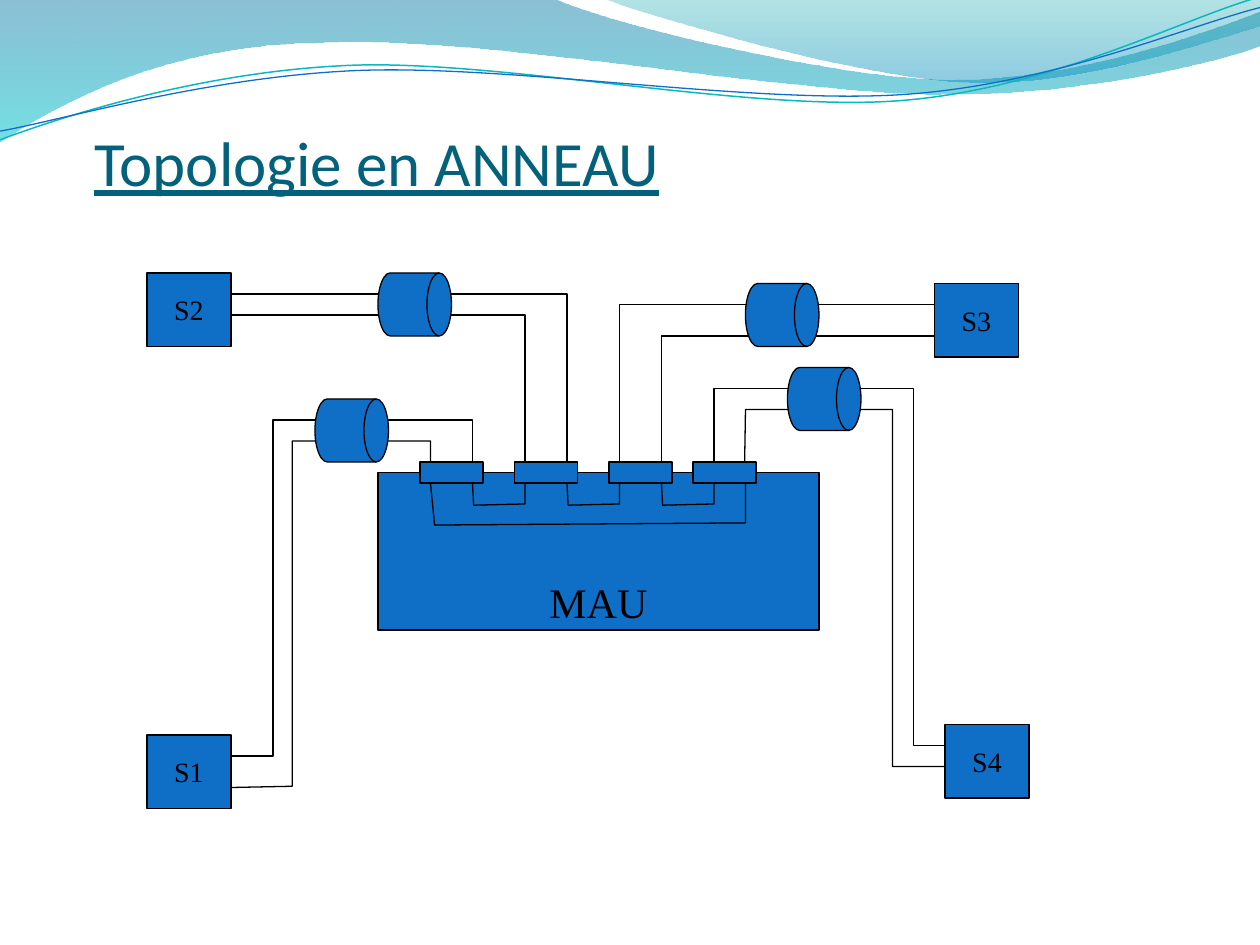
"""Build the ring topology slide: four stations wired through a MAU."""
from dataclasses import dataclass

import pptx
import pptx.dml.color
import pptx.enum.shapes
import pptx.enum.text
import pptx.oxml
import pptx.oxml.ns
import pptx.util

Pt = pptx.util.Pt
qn = pptx.oxml.ns.qn
SHAPES = pptx.enum.shapes.MSO_SHAPE
ANCHOR = pptx.enum.text.MSO_ANCHOR
ALIGN = pptx.enum.text.PP_ALIGN


@dataclass(frozen=True)
class Theme:
    blue: str = "0F6FC6"
    teal: str = "0AB8BF"
    title: str = "04617B"
    ink: str = "000000"
    heading_font: str = "Calibri"
    label_font: str = "Times New Roman"
    title_size: float = 36
    hub_size: float = 24
    station_size: float = 16
    stroke: float = 0.75
    teal_stroke: float = 0.85


THEME = Theme()
SLIDE_SIZE = (720, 540)
TITLE = ("Topologie en ANNEAU", (54, 48, 612, 66))

BANDS = [
    {"start": (0, -0.7),
     "segments": [(316.8, -0.7), (342.7, 12.2, 478.1, 45.4, 545.8, 45.4),
                  (614.2, 45.4, 689.8, 18.7, 720, 6.5), (720.7, 25.9),
                  (707.8, 31.7, 626.4, 54.7, 537.1, 54),
                  (447.8, 54, 275, 20.2, 185, 24.5),
                  (92.9, 25.2, 33.1, 59.8, -0.7, 81.4)],
     "stops": [("0074A1", 45), ("00C6CF", 55)]},
    {"start": (344.9, -0.7),
     "segments": [(366.5, 7.9, 491, 44.6, 553.7, 46.8),
                  (616.3, 49.7, 691.9, 23, 720, 15.1), (720, 0)],
     "stops": [("00A1A9", 30), ("008BBF", 45)]},
]
RIBBONS = [
    {"start": (0, 79.9),
     "segments": [(34.6, 67, 113.8, 41, 199.4, 37.4),
                  (284.4, 33.8, 427, 64.1, 513.4, 57.6),
                  (599.8, 51.1, 675.4, 10.8, 718.6, -1.4)],
     "color": THEME.teal, "width": THEME.teal_stroke},
    {"start": (0, 74.9),
     "segments": [(33.8, 69.1, 118.1, 43.9, 203.8, 40.3),
                  (290.2, 36.7, 429.8, 59.8, 516.2, 54),
                  (601.9, 48.2, 677.5, 15.1, 720, 4.3)],
     "color": THEME.blue, "width": THEME.stroke},
]

STATION_SIZE = (48, 42)
STATIONS = [("S2", (84, 156)), ("S3", (534, 162)), ("S1", (84, 420)), ("S4", (540, 414))]
HUB = ("MAU", (216, 270, 252, 90))
PORT_TOP, PORT_SIZE = 264, (36, 12)
PORT_LEFTS = [240, 294, 348, 396]
DRUM_SIZE = (42, 36)
DRUMS = [(216, 156), (426, 162), (180, 228), (450, 210)]

PORT_BOTTOM = PORT_TOP + PORT_SIZE[1]
JUMPER_STARTS, JUMPER_SPAN = [324, 270, 378], 30
RING_RETURN = [(246, PORT_BOTTOM), (248.4, 300), (426, 298.8), (426, PORT_BOTTOM)]
CABLES = [
    [(132, 168), (324, 168), (324, PORT_TOP)],
    [(300, PORT_TOP), (300, 180), (132, 180)],
    [(246, PORT_TOP), (246, 252), (167, 252), (167, 449.3), (132, 450)],
    [(270, PORT_TOP), (270, 240), (156, 240), (156, 432), (132, 432)],
    [(534, 174), (354, 174), (354, PORT_TOP)],
    [(534, 192), (378, 192), (378, PORT_TOP)],
    [(408, PORT_TOP), (408, 222), (522, 222), (522, 426), (540, 426)],
    [(425.5, PORT_TOP), (426, 234), (510, 234), (510, 438), (540, 438)],
]


def rgb(code):
    """Turn a hex code into a colour."""
    return pptx.dml.color.RGBColor.from_string(code)


def outline(shape, color=THEME.ink, width=THEME.stroke):
    """Give a shape its line and take away its shadow."""
    shape.shadow.inherit = False
    shape.line.color.rgb = rgb(color)
    shape.line.width = Pt(width)


def write_text(shape, text, *, font, size, color, align=ALIGN.CENTER,
               anchor=ANCHOR.MIDDLE, wrap=False, underline=None, insets=None):
    """Write one formatted line of text into a shape."""
    frame = shape.text_frame
    frame.word_wrap = wrap
    frame.vertical_anchor = anchor
    if insets:
        frame.margin_left, frame.margin_top, frame.margin_right, frame.margin_bottom = map(Pt, insets)
    paragraph = frame.paragraphs[0]
    paragraph.alignment = align
    run = paragraph.add_run()
    run.text = text
    run.font.name = font
    run.font.size = Pt(size)
    run.font.underline = underline
    run.font.color.rgb = rgb(color)


def add_block(slide, box, kind=SHAPES.RECTANGLE):
    """Add a blue outlined preset shape."""
    block = slide.shapes.add_shape(kind, *map(Pt, box))
    block.fill.solid()
    block.fill.fore_color.rgb = rgb(THEME.blue)
    outline(block)
    return block


def add_path(slide, start, segments, close=False):
    """Add a freeform whose segments are lines (x, y) or cubics (three points)."""
    builder = slide.shapes.build_freeform(*map(Pt, start), scale=1.0)
    builder.add_line_segments(
        [(Pt(x), Pt(y)) for segment in segments for x, y in zip(segment[::2], segment[1::2])],
        close=close)
    shape = builder.convert_to_shape()
    steps = iter(list(shape._element.iter(qn("a:lnTo"))))
    for segment in segments:
        step = next(steps)
        if len(segment) == 6:
            curve = step.makeelement(qn("a:cubicBezTo"), {})
            step.addprevious(curve)
            for part in (step, next(steps), next(steps)):
                curve.append(part[0])
                part.getparent().remove(part)
    return shape


def add_wire(slide, start, segments, **line):
    """Add an open unfilled path."""
    wire = add_path(slide, start, segments)
    wire.fill.background()
    outline(wire, **line)


def add_band(slide, start, segments, stops):
    """Add a translucent wave with a downward gradient."""
    band = add_path(slide, start, segments, close=True)
    band.shadow.inherit = False
    band.line.fill.background()
    band.fill.gradient()
    band.fill.gradient_angle = 270
    for stop, (color, _) in zip(band.fill.gradient_stops, stops):
        stop.color.rgb = rgb(color)
    colors = list(band._element.spPr.iter(qn("a:srgbClr")))
    for color, (_, opacity) in zip(colors, stops):
        color.append(color.makeelement(qn("a:alpha"), {"val": str(opacity * 1000)}))


def main():
    """Lay out the slide and save it."""
    deck = pptx.Presentation()
    deck.slide_width, deck.slide_height = map(Pt, SLIDE_SIZE)
    slide = deck.slides.add_slide(deck.slide_layouts[6])

    for band in BANDS:
        add_band(slide, **band)
    for ribbon in RIBBONS:
        add_wire(slide, **ribbon)

    heading, heading_box = TITLE
    write_text(slide.shapes.add_textbox(*map(Pt, heading_box)), heading,
               font=THEME.heading_font, size=THEME.title_size, color=THEME.title,
               align=ALIGN.LEFT, anchor=ANCHOR.BOTTOM, wrap=True, underline=True,
               insets=(0, 3.6, 0, 0))

    for name, corner in STATIONS:
        write_text(add_block(slide, corner + STATION_SIZE), name,
                   font=THEME.label_font, size=THEME.station_size, color=THEME.ink)
    hub_name, hub_box = HUB
    write_text(add_block(slide, hub_box), hub_name, font=THEME.label_font,
               size=THEME.hub_size, color=THEME.ink, anchor=ANCHOR.BOTTOM,
               insets=(7.2, 3.6, 7.2, 2))
    for left in PORT_LEFTS:
        add_block(slide, (left, PORT_TOP) + PORT_SIZE)

    jumpers = [[(x, PORT_BOTTOM), (x + 0.7, 288.7), (x + JUMPER_SPAN, 288),
                (x + JUMPER_SPAN, PORT_BOTTOM)] for x in JUMPER_STARTS]
    for start, *corners in jumpers + [RING_RETURN] + CABLES:
        add_wire(slide, start, corners)
    for corner in DRUMS:
        add_block(slide, corner + DRUM_SIZE, SHAPES.FLOWCHART_DIRECT_ACCESS_STORAGE)

    deck.save("out.pptx")


if __name__ == "__main__":
    main()
